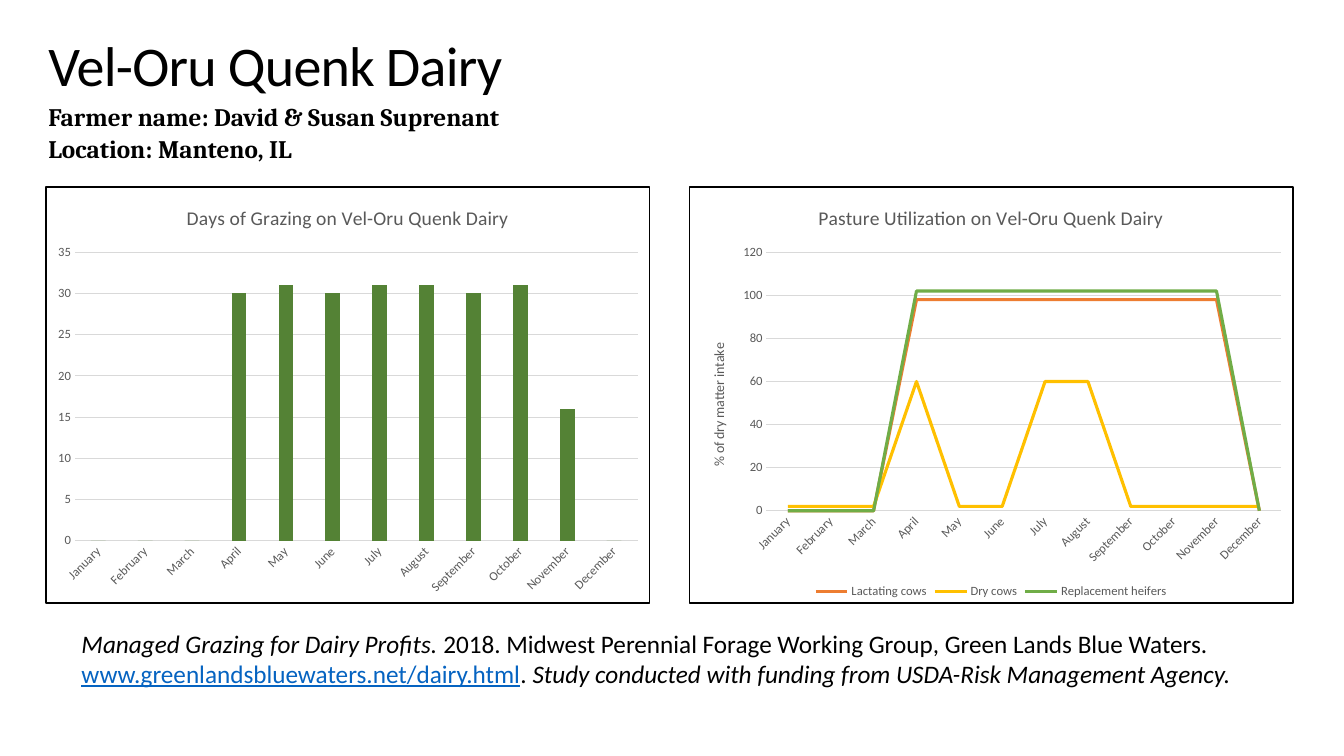
from lxml.etree import SubElement
from pptx import Presentation
from pptx.chart.data import CategoryChartData
from pptx.dml.color import RGBColor
from pptx.enum.chart import XL_CHART_TYPE, XL_LEGEND_POSITION, XL_TICK_MARK
from pptx.enum.text import MSO_ANCHOR, MSO_AUTO_SIZE, PP_ALIGN
from pptx.oxml import parse_xml
from pptx.oxml.ns import nsdecls, qn
from pptx.util import Inches, Pt

FARM = "Vel-Oru Quenk Dairy"
DETAILS = ["Farmer name: David & Susan Suprenant", "Location: Manteno, IL"]
# text, italic, link style
SOURCE = [
    ("Managed Grazing for Dairy Profits. ", True, False),
    ("2018. Midwest Perennial Forage Working Group, Green Lands Blue Waters. ", False, False),
    ("www.greenlandsbluewaters.net/dairy.html", False, True),
    (". ", False, False),
    ("Study conducted with funding from USDA-Risk Management Agency.", True, False),
]
MONTHS = ["January", "February", "March", "April", "May", "June", "July",
          "August", "September", "October", "November", "December"]
GRAZING_DAYS = [("Series 1", "548235", [0, 0, 0, 30, 31, 30, 31, 31, 30, 31, 16, 0])]
PASTURE_USE = [
    ("Lactating cows", "ED7D31", [0] * 3 + [98] * 8 + [0]),
    ("Dry cows", "FFC000", [2, 2, 2, 60, 2, 2, 60, 60, 2, 2, 2, 2]),
    ("Replacement heifers", "70AD47", [0] * 3 + [102] * 8 + [0]),
]
BLACK, GREY, GRID, LINK = "000000", "595959", "D9D9D9", "0563C1"

CHART_LEFT, CHART_TOP, CHART_WIDTH, CHART_HEIGHT, CHART_GAP = 0.45, 1.85, 6, 4.14, 0.38


def color(value):
    return RGBColor.from_string(value)


def style(font, size, value=BLACK, face="Calibri", bold=False):
    font.name, font.size, font.bold = face, Pt(size), bold
    font.color.rgb = color(value)


def place(shape, left, top, width, height):
    shape.left, shape.top, shape.width, shape.height = map(
        Inches, (left, top, width, height))
    frame = shape.text_frame
    frame.word_wrap = True
    frame.auto_size = MSO_AUTO_SIZE.NONE
    frame.vertical_anchor = MSO_ANCHOR.TOP
    return frame


def add_month_chart(column, kind, heading, series):
    data = CategoryChartData()
    data.categories = MONTHS
    for name, _, values in series:
        data.add_series(name, values)
    left = CHART_LEFT + column * (CHART_WIDTH + CHART_GAP)
    chart = slide.shapes.add_chart(
        kind, Inches(left), Inches(CHART_TOP),
        Inches(CHART_WIDTH), Inches(CHART_HEIGHT), data).chart
    style(chart.font, 10)
    chart.has_legend = False
    chart.has_title = True
    chart.chart_title.include_in_layout = False
    set_heading(chart.chart_title, heading, 14)

    for axis in (chart.category_axis, chart.value_axis):
        axis.major_tick_mark = axis.minor_tick_mark = XL_TICK_MARK.NONE
        style(axis.tick_labels.font, 9, GREY)
    set_line(chart.category_axis.format.line, GRID, 0.75)
    chart.category_axis._element.find(qn("c:txPr")).find(qn("a:bodyPr")).set("rot", "-2700000")
    chart.value_axis.format.line.fill.background()
    set_line(chart.value_axis.major_gridlines.format.line, GRID, 0.75)
    frame_chart(chart)
    return chart


def set_heading(heading, words, size):
    heading.text_frame.text = words
    style(heading.text_frame.paragraphs[0].runs[0].font, size, GREY)


def set_line(line, value, width):
    line.color.rgb = color(value)
    line.width = Pt(width)


def frame_chart(chart):
    """Give the chart area a white fill and a square black border."""
    space = chart._chartSpace
    space.find(qn("c:chart")).addnext(parse_xml(
        f'<c:spPr {nsdecls("c", "a")}><a:solidFill><a:srgbClr val="FFFFFF"/></a:solidFill>'
        f'<a:ln w="{Pt(1)}"><a:solidFill><a:srgbClr val="{BLACK}"/></a:solidFill></a:ln></c:spPr>'))
    if space.find(qn("c:roundedCorners")) is None:
        space.find(qn("c:date1904")).addnext(
            parse_xml(f'<c:roundedCorners {nsdecls("c")} val="0"/>'))


prs = Presentation()
prs.slide_width, prs.slide_height = Inches(13.33), Inches(7.5)
slide = prs.slides.add_slide(prs.slide_layouts[1])

title_frame = place(slide.shapes.title, 0.38, 0.25, 6.67, 0.78)
title_frame.text = FARM
title_line = title_frame.paragraphs[0]
title_line.alignment = PP_ALIGN.LEFT
style(title_line.runs[0].font, 40)
title_line.runs[0].font._element.set("spc", "-50")

details_frame = place(slide.placeholders[1], 0.38, 0.93, 6.67, 0.74)
details_frame.text = "\n".join(DETAILS)
for line in details_frame.paragraphs:
    line.line_spacing = 1.07
    line.space_before = Pt(0)
    properties = line._p.get_or_add_pPr()
    properties.set("marL", "0")
    properties.set("indent", "0")
    SubElement(properties, qn("a:buNone"))
    style(line.runs[0].font, 18, face="Cambria", bold=True)

days = add_month_chart(0, XL_CHART_TYPE.COLUMN_CLUSTERED,
                       f"Days of Grazing on {FARM}", GRAZING_DAYS)
bars = days.plots[0]
bars.gap_width, bars.overlap, bars.vary_by_categories = 219, -27, False
bars.series[0].format.fill.solid()
bars.series[0].format.fill.fore_color.rgb = color(GRAZING_DAYS[0][1])

pasture = add_month_chart(1, XL_CHART_TYPE.LINE,
                          f"Pasture Utilization on {FARM}", PASTURE_USE)
pasture.plots[0].vary_by_categories = False
for herd, (_, herd_color, _) in zip(pasture.plots[0].series, PASTURE_USE):
    herd.smooth = False
    set_line(herd.format.line, herd_color, 2.25)
set_heading(pasture.value_axis.axis_title, "% of dry matter intake", 10)
pasture.has_legend = True
pasture.legend.position = XL_LEGEND_POSITION.BOTTOM
pasture.legend.include_in_layout = False
style(pasture.legend.font, 9, GREY)

source_frame = place(slide.shapes.add_textbox(0, 0, 0, 0), 0.71, 6.18, 12.12, 0.71)
for words, italic, is_link in SOURCE:
    run = source_frame.paragraphs[0].add_run()
    run.text = words
    style(run.font, 18, LINK if is_link else BLACK)
    run.font.italic, run.font.underline = italic, is_link

prs.save("out.pptx")
